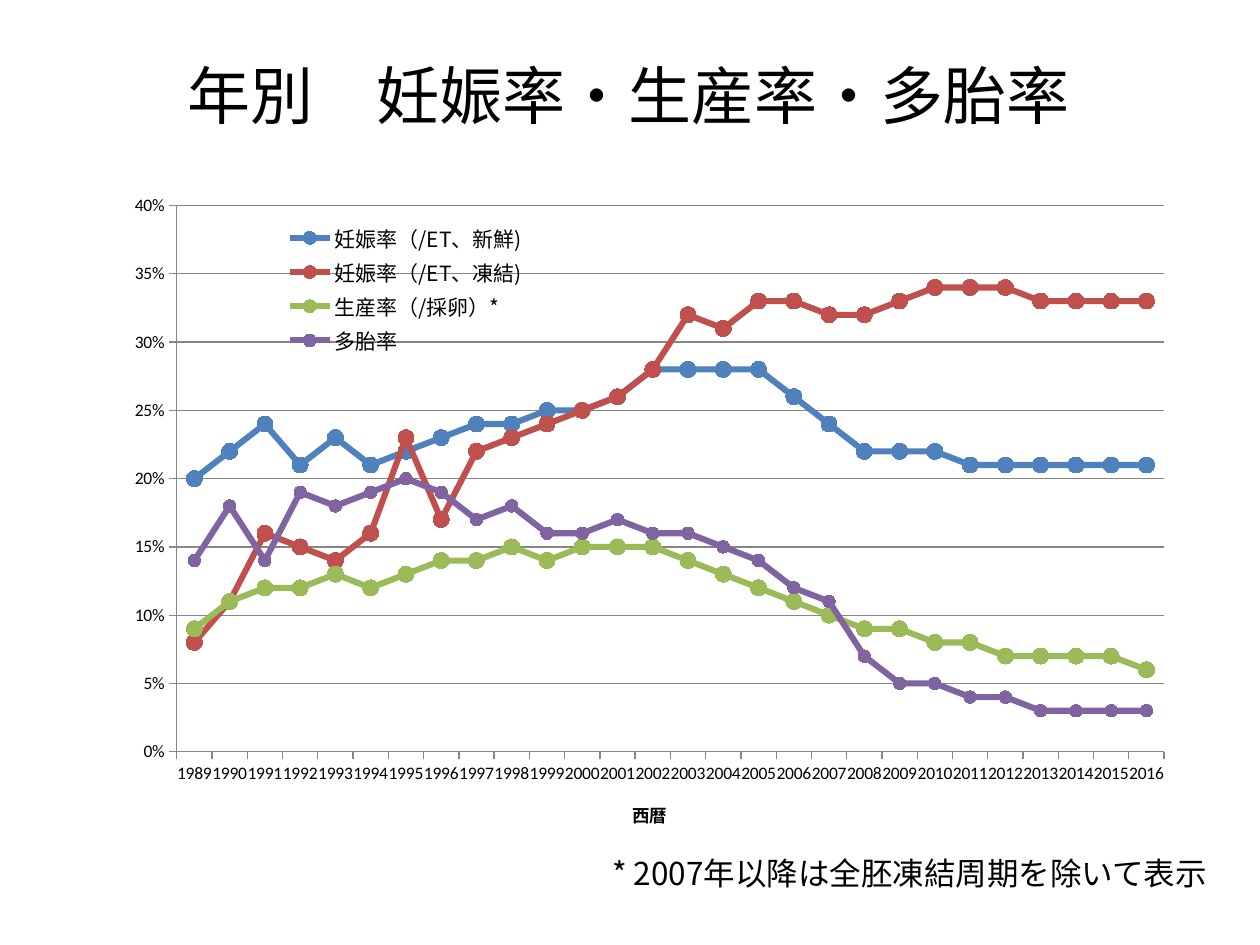
from dataclasses import dataclass

from lxml import etree
from pptx import Presentation
from pptx.chart.data import CategoryChartData
from pptx.dml.color import RGBColor
from pptx.enum.chart import XL_CHART_TYPE, XL_LEGEND_POSITION, XL_MARKER_STYLE, XL_TICK_MARK
from pptx.enum.text import MSO_ANCHOR, MSO_AUTO_SIZE, PP_ALIGN
from pptx.oxml.ns import qn
from pptx.util import Inches, Pt

LINE_MARKERS = XL_CHART_TYPE.LINE_MARKERS
LEGEND_RIGHT = XL_LEGEND_POSITION.RIGHT
CIRCLE = XL_MARKER_STYLE.CIRCLE
TICK_OUT = XL_TICK_MARK.OUTSIDE
MIDDLE = MSO_ANCHOR.MIDDLE
FIT_SHAPE = MSO_AUTO_SIZE.SHAPE_TO_FIT_TEXT
CENTER = PP_ALIGN.CENTER


@dataclass(frozen=True)
class Theme:
    text: RGBColor = RGBColor(0, 0, 0)
    axis: RGBColor = RGBColor(0x86, 0x86, 0x86)
    japanese: str = "Noto Sans CJK JP"
    latin: str = "Calibri"
    title: Pt = Pt(36)
    note: Pt = Pt(18)
    legend: Pt = Pt(12)
    label: Pt = Pt(10)
    rate_line: Pt = Pt(3.5)
    axis_line: Pt = Pt(0.75)


THEME = Theme()
YEARS = [str(year) for year in range(1989, 2017)]
RATES = [
    ("妊娠率（/ET、新鮮)", "4F81BD", 9,
     [20, 22, 24, 21, 23, 21, 22, 23, 24, 24, 25, 25, 26, 28,
      28, 28, 28, 26, 24, 22, 22, 22, 21, 21, 21, 21, 21, 21]),
    ("妊娠率（/ET、凍結)", "C0504D", 9,
     [8, 11, 16, 15, 14, 16, 23, 17, 22, 23, 24, 25, 26, 28,
      32, 31, 33, 33, 32, 32, 33, 34, 34, 34, 33, 33, 33, 33]),
    ("生産率（/採卵）*", "9BBB59", 9,
     [9, 11, 12, 12, 13, 12, 13, 14, 14, 15, 14, 15, 15, 15,
      14, 13, 12, 11, 10, 9, 9, 8, 8, 7, 7, 7, 7, 6]),
    ("多胎率", "8064A2", 7,
     [14, 18, 14, 19, 18, 19, 20, 19, 17, 18, 16, 16, 17, 16,
      16, 15, 14, 12, 11, 7, 5, 5, 4, 4, 3, 3, 3, 3]),
]


def write_japanese(frame, text, size):
    frame.text = text
    run = frame.paragraphs[0].runs[0]
    run.font.size = size
    run.font.name = THEME.japanese
    run.font.color.rgb = THEME.text
    east_asian = etree.SubElement(run.font._element, qn("a:ea"))
    east_asian.set("typeface", THEME.japanese)


def add_title(slide, text):
    title = slide.shapes.title
    title.left, title.top = Inches(0.49), Inches(0.29)
    title.width, title.height = Inches(9), Inches(0.91)
    title.text_frame.vertical_anchor = MIDDLE
    write_japanese(title.text_frame, text, THEME.title)
    title.text_frame.paragraphs[0].alignment = CENTER


def add_note(slide, text):
    note = slide.shapes.add_textbox(Inches(4.76), Inches(6.73), Inches(4.99), Inches(0.4))
    note.text_frame.word_wrap = False
    note.text_frame.auto_size = FIT_SHAPE
    write_japanese(note.text_frame, text, THEME.note)


def make_layout(x, y, width, height, inner=False):
    layout = etree.Element(qn("c:layout"))
    manual = etree.SubElement(layout, qn("c:manualLayout"))
    settings = [("layoutTarget", "inner")] if inner else []
    settings += [("xMode", "edge"), ("yMode", "edge"),
                 ("x", x), ("y", y), ("w", width), ("h", height)]
    for tag, value in settings:
        etree.SubElement(manual, qn(f"c:{tag}")).set("val", str(value))
    return layout


def place(part, index, layout):
    for automatic in part.findall(qn("c:layout")):
        part.remove(automatic)
    part.insert(index, layout)


def style_line(line, color, width):
    line.color.rgb = color
    line.width = width


def style_axis(axis):
    axis.major_tick_mark = TICK_OUT
    axis.tick_labels.font.size = THEME.label
    style_line(axis.format.line, THEME.axis, THEME.axis_line)


def style_year_axis(axis):
    style_axis(axis)
    axis.has_major_gridlines = False
    title = axis.axis_title.text_frame
    title.text = "西暦"
    font = title.paragraphs[0].runs[0].font
    font.size, font.bold, font.name = THEME.label, True, THEME.latin
    font.color.rgb = THEME.text
    skip = etree.Element(qn("c:tickLblSkip"))
    skip.set("val", "1")
    axis._element.find(qn("c:noMultiLvlLbl")).addprevious(skip)


def style_rate_axis(axis):
    style_axis(axis)
    axis.minimum_scale, axis.maximum_scale, axis.major_unit = 0, 0.4, 0.05
    axis.tick_labels.number_format = "0%"
    axis.tick_labels.number_format_is_linked = False
    axis.has_major_gridlines = True
    style_line(axis.major_gridlines.format.line, THEME.axis, THEME.axis_line)


def style_legend(chart):
    chart.has_legend = True
    legend = chart.legend
    legend.position = LEGEND_RIGHT
    legend.include_in_layout = False
    legend.font.size = THEME.legend
    legend.font.name = THEME.japanese
    legend.font.color.rgb = THEME.text
    place(legend._element, 1, make_layout(0.19, 0.08, 0.24, 0.2))


def style_rate(series, color, marker_size):
    series.smooth = False
    style_line(series.format.line, color, THEME.rate_line)
    series.marker.style = CIRCLE
    series.marker.size = marker_size
    series.marker.format.fill.solid()
    series.marker.format.fill.fore_color.rgb = color
    series.marker.format.line.color.rgb = color


def add_rate_chart(slide):
    data = CategoryChartData(number_format="0%")
    data.categories = YEARS
    for name, _, _, percents in RATES:
        data.add_series(name, [percent / 100 for percent in percents])
    chart = slide.shapes.add_chart(LINE_MARKERS, Inches(0.33), Inches(1.3),
                                   Inches(9.33), Inches(5.53), data).chart
    chart.has_title = False
    chart.font.size = THEME.label
    chart.font.name = THEME.latin
    chart.font.color.rgb = THEME.text
    style_year_axis(chart.category_axis)
    style_rate_axis(chart.value_axis)
    style_legend(chart)
    rate_plot = chart.plots[0]
    rate_plot.vary_by_categories = False
    for series, (_, color, marker_size, _) in zip(rate_plot.series, RATES):
        style_rate(series, RGBColor.from_string(color), marker_size)
    place(chart._chartSpace.chart.plotArea, 0,
          make_layout(0.115, 0.06, 0.84, 0.784, inner=True))


def main():
    deck = Presentation()
    deck.slide_width, deck.slide_height = Inches(10), Inches(7.5)
    slide = deck.slides.add_slide(deck.slide_layouts[5])
    add_title(slide, "年別　妊娠率・生産率・多胎率")
    add_note(slide, "* 2007年以降は全胚凍結周期を除いて表示")
    add_rate_chart(slide)
    deck.save("out.pptx")


if __name__ == "__main__":
    main()
